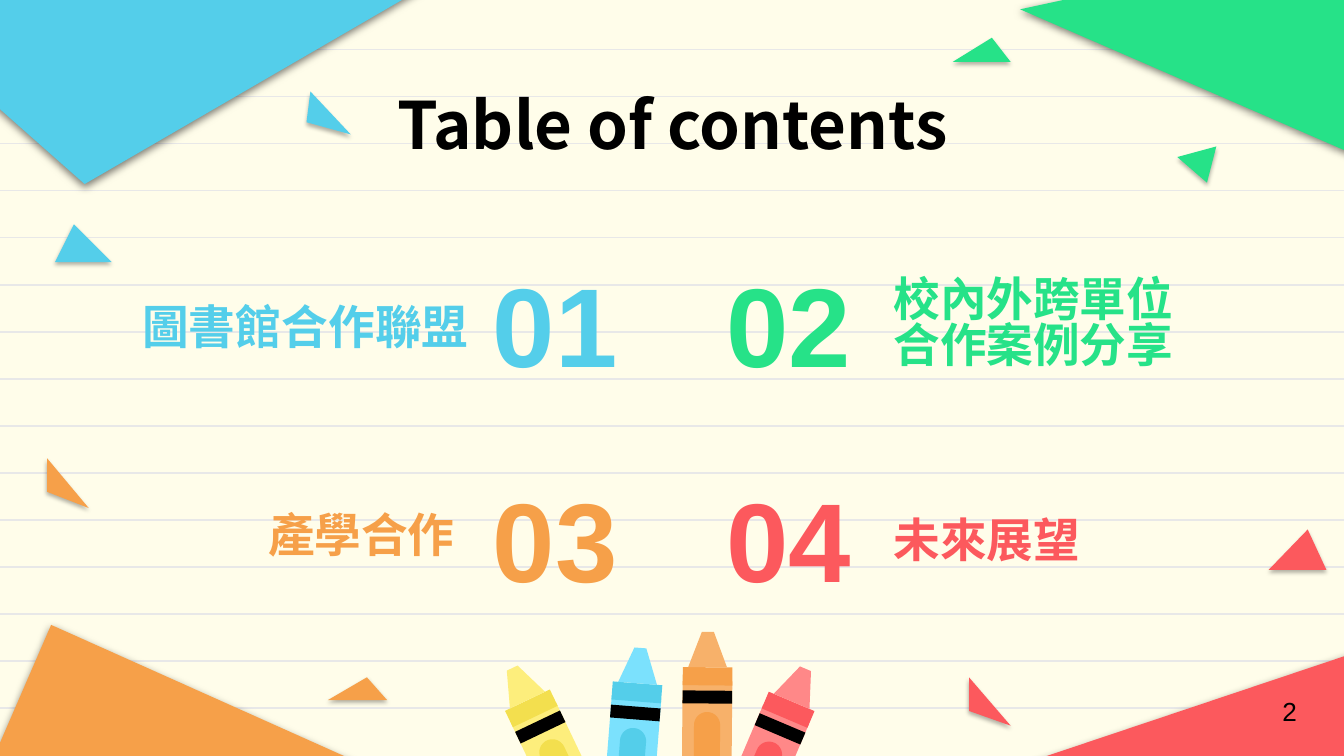
from math import cos, pi, radians, sin

from lxml import etree
from pptx import Presentation
from pptx.dml.color import RGBColor
from pptx.enum.shapes import MSO_CONNECTOR
from pptx.enum.text import MSO_ANCHOR, MSO_AUTO_SIZE, PP_ALIGN
from pptx.oxml.ns import qn
from pptx.util import Pt

STRAIGHT = MSO_CONNECTOR.STRAIGHT
TOP, MIDDLE = MSO_ANCHOR.TOP, MSO_ANCHOR.MIDDLE
LEFT, CENTER, RIGHT = PP_ALIGN.LEFT, PP_ALIGN.CENTER, PP_ALIGN.RIGHT
NO_AUTOFIT = MSO_AUTO_SIZE.NONE

PAPER = RGBColor(0xFF, 0xFD, 0xEA)
RULE = RGBColor(0xE8, 0xE8, 0xE8)
BLACK = RGBColor(0, 0, 0)
BLUE = RGBColor(0x54, 0xCE, 0xEA)
GREEN = RGBColor(0x26, 0xE2, 0x88)
ORANGE = RGBColor(0xF6, 0xA0, 0x49)
RED = RGBColor(0xFC, 0x59, 0x5D)
YELLOW = RGBColor(0xF3, 0xDF, 0x4E)
LIGHT_BLUE = RGBColor(0x7B, 0xE1, 0xFD)
LIGHT_ORANGE = RGBColor(0xF7, 0xB1, 0x6A)
LIGHT_RED = RGBColor(0xFF, 0x88, 0x88)
LIGHT_YELLOW = RGBColor(0xFD, 0xEE, 0x7C)
HEADING_FONT, NUMBER_FONT = "Noto Sans CJK SC", "Arial"

# Content: number, number position, label, label box, alignment, line spacing, colour
TITLE = "Table of contents"
PAGE_NUMBER = "2"
ENTRIES = [
    ("01", (252, 139.7), "圖書館合作聯盟", (69.1, 153.4, 191, 41.8), LEFT, 1, BLUE),
    ("02", (377.3, 139.7), "校內外跨單位合作案例分享", (471.6, 153.4, 181.4, 41.8), LEFT, 0.83, GREEN),
    ("03", (252, 254.9), "產學合作", (69.1, 265, 181.4, 41.8), RIGHT, 1, ORANGE),
    ("04", (377.3, 254.9), "未來展望", (471.6, 267.8, 181.4, 41.8), LEFT, 1, RED),
]
NUMBER_SIZE = (90.7, 66.2)

# Paper pieces: colour and corner points
CORNERS = [
    (ORANGE, [(211, 417), (27.4, 334.8), (-23.8, 452.9)]),
    (BLUE, [(-67, -0.7), (45.4, 98.6), (278.6, -36.7)]),
    (GREEN, [(546.5, 5), (748.8, 92.9), (736.6, -36)]),
    (RED, [(729.4, 348.5), (523.4, 417.6), (722.2, 521.3)]),
]
SCRAPS = [
    (BLUE, [(39.6, 120.2), (29.5, 140.4), (59.8, 140.4)]),
    (ORANGE, [(25.2, 245.5), (25.2, 263.5), (47.5, 272.2)]),
    (ORANGE, [(196.6, 362.9), (175.7, 375.1), (207.4, 375.1)]),
    (GREEN, [(651.6, 78.5), (630.7, 84.2), (646.6, 97.9)]),
    (GREEN, [(531.4, 20.2), (510.5, 33.1), (541.4, 33.1)]),
    (RED, [(700.6, 283.7), (679.7, 305.3), (710.6, 305.3)]),
    (RED, [(519.1, 362.9), (519.1, 380.9), (541.4, 388.8)]),
    (BLUE, [(164.2, 65.5), (187.9, 72), (166.3, 49)]),
]
CORNER_SHADOW = {"blur": 4.5, "opacity": 50}
SCRAP_SHADOW = {"blur": 2.2, "opacity": 30}

# Crayons: centre of the top of the band, tilt in degrees, light and strong colour
CRAYONS = [
    (379.1, 357.5, 0.5, LIGHT_ORANGE, ORANGE),
    (282.6, 375.1, -25.5, LIGHT_YELLOW, YELLOW),
    (341.6, 366.1, 4.5, LIGHT_BLUE, BLUE),
    (424.1, 375.8, 23, LIGHT_RED, RED),
]


def box(half_width, top, bottom):
    return [(-half_width, top), (half_width, top), (half_width, bottom), (-half_width, bottom)]


def round_topped(radius, top, bottom, steps=16):
    arc = [(-radius * cos(pi * i / steps), top + radius - radius * sin(pi * i / steps))
           for i in range(steps + 1)]
    return arc + [(radius, bottom), (-radius, bottom)]


def add_polygon(shapes, points, color, shadow=None):
    corners = [(Pt(x), Pt(y)) for x, y in points]
    builder = shapes.build_freeform(*corners[0], scale=1.0)
    builder.add_line_segments(corners[1:], close=True)
    shape = builder.convert_to_shape()
    shape.fill.solid()
    shape.fill.fore_color.rgb = color
    shape.line.fill.background()
    shape.shadow.inherit = False
    if shadow:
        effects = shape._element.spPr.find(qn("a:effectLst"))
        outer = etree.SubElement(effects, qn("a:outerShdw"), blurRad=str(Pt(shadow["blur"])),
                                 dist=str(Pt(1.5)), dir="5400000", algn="bl", rotWithShape="0")
        tint = etree.SubElement(outer, qn("a:srgbClr"), val="000000")
        etree.SubElement(tint, qn("a:alpha"), val=str(shadow["opacity"] * 1000))


def add_crayon(shapes, x, y, tilt, light, strong):
    c, s = cos(radians(tilt)), sin(radians(tilt))
    parts = [
        (light, box(13.3, 7.5, 65)),
        (strong, box(13.3, 0, 9.7)),
        (strong, round_topped(7, 24, 65)),
        (BLACK, box(13.3, 12.5, 19.4)),
        (light, [(-10.4, 0), (10.4, 0), (3.2, -19), (-3.2, -19)]),
    ]
    group = shapes.add_group_shape()
    for color, points in parts:
        turned = [(x + px * c - py * s, y + px * s + py * c) for px, py in points]
        add_polygon(group.shapes, turned, color)


def write(shape, text, bounds, font_name, size, color, bold=True, align=CENTER,
          anchor=MIDDLE, spacing=1, wrap=True):
    shape.left, shape.top, shape.width, shape.height = map(Pt, bounds)
    frame = shape.text_frame
    frame_format = {"word_wrap": wrap, "auto_size": NO_AUTOFIT, "vertical_anchor": anchor}
    for side in ("left", "top", "right", "bottom"):
        frame_format["margin_" + side] = Pt(7.2)
    for name, value in frame_format.items():
        setattr(frame, name, value)
    paragraph = frame.paragraphs[0]
    paragraph.alignment, paragraph.line_spacing = align, spacing
    run = paragraph.add_run()
    run.text = text
    for name, value in {"name": font_name, "size": Pt(size), "bold": bold}.items():
        setattr(run.font, name, value)
    run.font.color.rgb = color
    east_asian = etree.Element(qn("a:ea"), typeface=font_name)
    run.font._element.find(qn("a:latin")).addnext(east_asian)


def add_text(shapes, *args, **formats):
    write(shapes.add_textbox(0, 0, 0, 0), *args, **formats)


def main():
    presentation = Presentation()
    presentation.slide_width, presentation.slide_height = Pt(720), Pt(405)
    slide = presentation.slides.add_slide(presentation.slide_layouts[5])
    shapes = slide.shapes
    slide.background.fill.solid()
    slide.background.fill.fore_color.rgb = PAPER

    # Ruled paper
    for row in range(15):
        y = Pt(26.6 + 25.2 * row)
        rule = shapes.add_connector(STRAIGHT, 0, y, Pt(720), y)
        rule.line.color.rgb, rule.line.width = RULE, Pt(0.75)
        etree.SubElement(rule._element.spPr, qn("a:effectLst"))

    # Crayons and corner paper
    for crayon in CRAYONS:
        add_crayon(shapes, *crayon)
    for color, points in CORNERS:
        add_polygon(shapes, points, color, CORNER_SHADOW)

    # Title, brought in front of the ruled paper
    title = shapes.title
    shapes._spTree.append(title._element)
    write(title, TITLE, (56.9, 42.5, 607, 45.4), HEADING_FONT, 35, BLACK, anchor=TOP, spacing=0.9)

    # Contents entries
    for number, position, label, bounds, align, spacing, color in ENTRIES:
        add_text(shapes, label, bounds, HEADING_FONT, 25, color, align=align, spacing=spacing)
        add_text(shapes, number, position + NUMBER_SIZE, NUMBER_FONT, 60, color)

    # Paper scraps and page number
    for color, points in SCRAPS:
        add_polygon(shapes, points, color, SCRAP_SHADOW)
    add_text(shapes, PAGE_NUMBER, (679.7, 368.6, 22.3, 24.5), NUMBER_FONT, 14, BLACK,
             bold=False, wrap=False)

    presentation.save("out.pptx")


if __name__ == "__main__":
    main()
